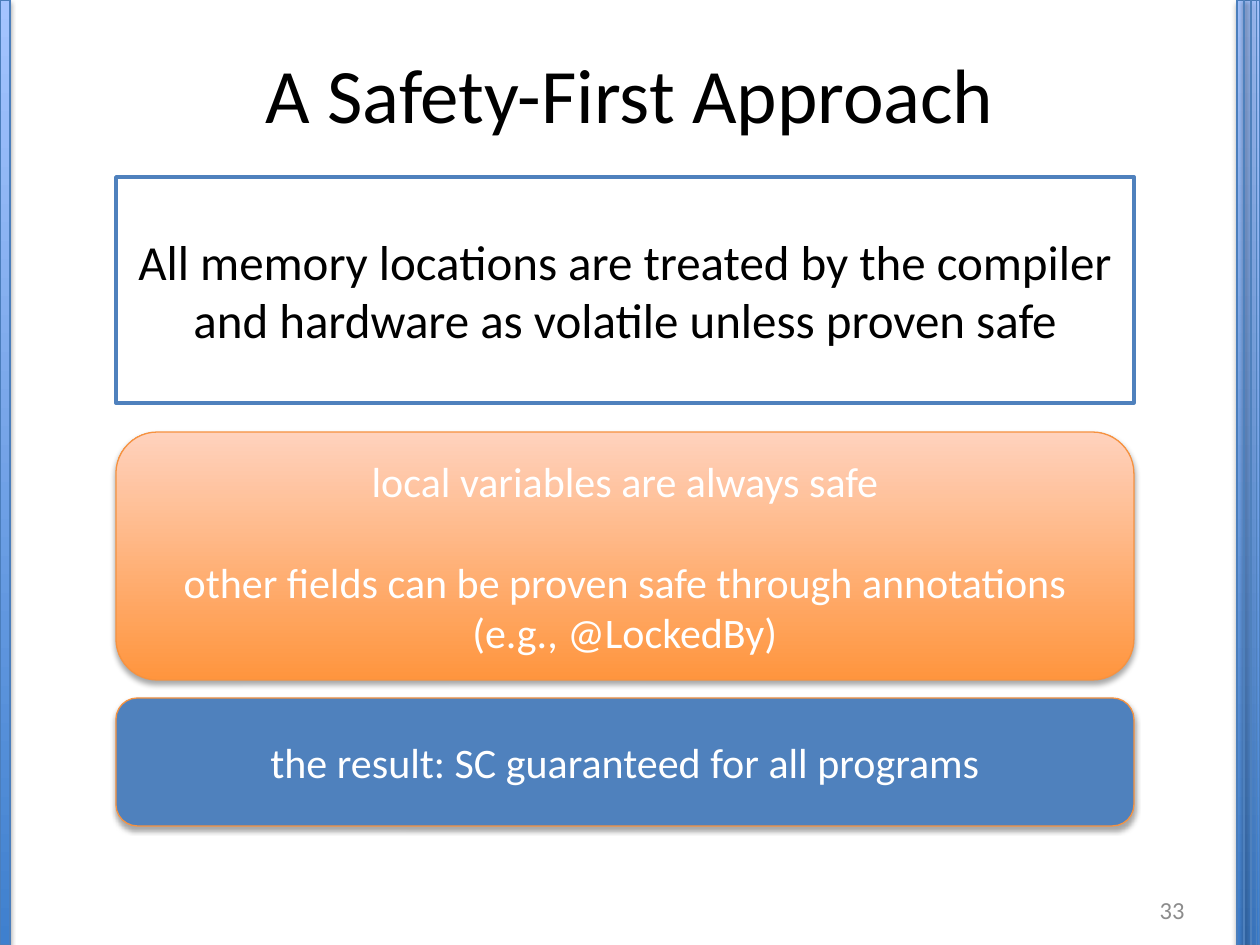
from dataclasses import dataclass

from lxml import etree
from pptx import Presentation
from pptx.dml.color import RGBColor
from pptx.enum.shapes import MSO_CONNECTOR, MSO_SHAPE
from pptx.enum.text import MSO_ANCHOR, MSO_AUTO_SIZE, PP_ALIGN
from pptx.oxml.ns import qn
from pptx.util import Pt

RECTANGLE = MSO_SHAPE.RECTANGLE
ROUNDED = MSO_SHAPE.ROUNDED_RECTANGLE
STRAIGHT = MSO_CONNECTOR.STRAIGHT
MIDDLE = MSO_ANCHOR.MIDDLE
NO_AUTOFIT = MSO_AUTO_SIZE.NONE
CENTER = PP_ALIGN.CENTER
RIGHT = PP_ALIGN.RIGHT
PX = 914400 / 126
WIDTH, HEIGHT = 1260, 945


@dataclass(frozen=True)
class Theme:
    font: str = "Calibri"
    black: str = "000000"
    white: str = "FFFFFF"
    gray: str = "8C8C8C"
    blue: str = "4F81BD"
    bar_line: str = "4B7EBC"
    bar_gradient: tuple = ("3F80CE", "A4C4FF")
    orange_line: str = "F69240"
    orange_gradient: tuple = ("FF953E", "FFD2BD")
    title_size: int = 44
    rule_size: int = 28
    body_size: int = 24
    number_size: int = 14
    paragraph_gap: int = 29


theme = Theme()


def add_shadow(shape, opacity, distance):
    effects = etree.SubElement(shape._element.spPr, qn("a:effectLst"))
    shadow = etree.SubElement(
        effects, qn("a:outerShdw"), blurRad=str(Pt(3.1)), dist=str(Pt(distance)),
        dir="5400000", rotWithShape="0")
    color = etree.SubElement(shadow, qn("a:srgbClr"), val=theme.black)
    etree.SubElement(color, qn("a:alpha"), val=str(opacity * 1000))


def write_text(shape, texts, size, color, alignment):
    frame = shape.text_frame
    frame.word_wrap = True
    frame.auto_size = NO_AUTOFIT
    frame.vertical_anchor = MIDDLE
    for index, text in enumerate(texts):
        paragraph = frame.add_paragraph() if index else frame.paragraphs[0]
        paragraph.alignment = alignment
        if index:
            paragraph.space_before = Pt(theme.paragraph_gap)
        run = paragraph.add_run()
        run.text = text
        run.font.name = theme.font
        run.font.size = Pt(size)
        run.font.color.rgb = RGBColor.from_string(color)


presentation = Presentation()
presentation.slide_width = round(WIDTH * PX)
presentation.slide_height = round(HEIGHT * PX)
slide = presentation.slides.add_slide(presentation.slide_layouts[5])

bar_style = (RECTANGLE, theme.bar_gradient, theme.bar_line, 0.75, True)
panels = [
    (1237, 0, 23, HEIGHT, *bar_style, [], theme.body_size, theme.white),
    (0, 0, 10, HEIGHT, *bar_style, [], theme.body_size, theme.white),
    (116, 177, 1018, 226, RECTANGLE, (theme.white,), theme.blue, 2, False,
     ["All memory locations are treated by the compiler and hardware as volatile unless proven safe"],
     theme.rule_size, theme.black),
    (116, 432, 1018, 248, ROUNDED, theme.orange_gradient, theme.orange_line, 0.75, True,
     ["local variables are always safe",
      "other fields can be proven safe through annotations (e.g., @LockedBy)"],
     theme.body_size, theme.white),
    (116, 698, 1018, 128, ROUNDED, (theme.blue,), theme.orange_line, 0.75, True,
     ["the result: SC guaranteed for all programs"], theme.body_size, theme.white),
]
for left, top, width, height, kind, colors, line, weight, shadowed, texts, size, text_color in panels:
    panel = slide.shapes.add_shape(
        kind, *(round(length * PX) for length in (left, top, width, height)))
    if len(colors) == 1:
        panel.fill.solid()
        panel.fill.fore_color.rgb = RGBColor.from_string(colors[0])
    else:
        panel.fill.gradient()
        panel.fill.gradient_angle = 90
        for stop, color in zip(panel.fill.gradient_stops, colors):
            stop.color.rgb = RGBColor.from_string(color)
    panel.line.color.rgb = RGBColor.from_string(line)
    panel.line.width = Pt(weight)
    if shadowed:
        add_shadow(panel, 35, 1.8)
    else:
        panel.shadow.inherit = False
    write_text(panel, texts, size, text_color, CENTER)

for x, weight in ((1244, 1.5), (1251, 1), (1256, 0.5)):
    stripe = slide.shapes.add_connector(
        STRAIGHT, round(x * PX), 0, round(x * PX), round(HEIGHT * PX))
    stripe.line.color.rgb = RGBColor.from_string(theme.blue)
    stripe.line.width = Pt(weight)
    add_shadow(stripe, 38, 1.6)

title = slide.shapes.title
title.left, title.top, title.width, title.height = (
    round(length * PX) for length in (63, 38, 1134, 110))
write_text(title, ["A Safety-First Approach"], theme.title_size, theme.black, CENTER)

page_number = slide.shapes.add_textbox(
    *(round(length * PX) for length in (903, 885, 294, 50)))
write_text(page_number, ["33"], theme.number_size, theme.gray, RIGHT)

presentation.save("out.pptx")
